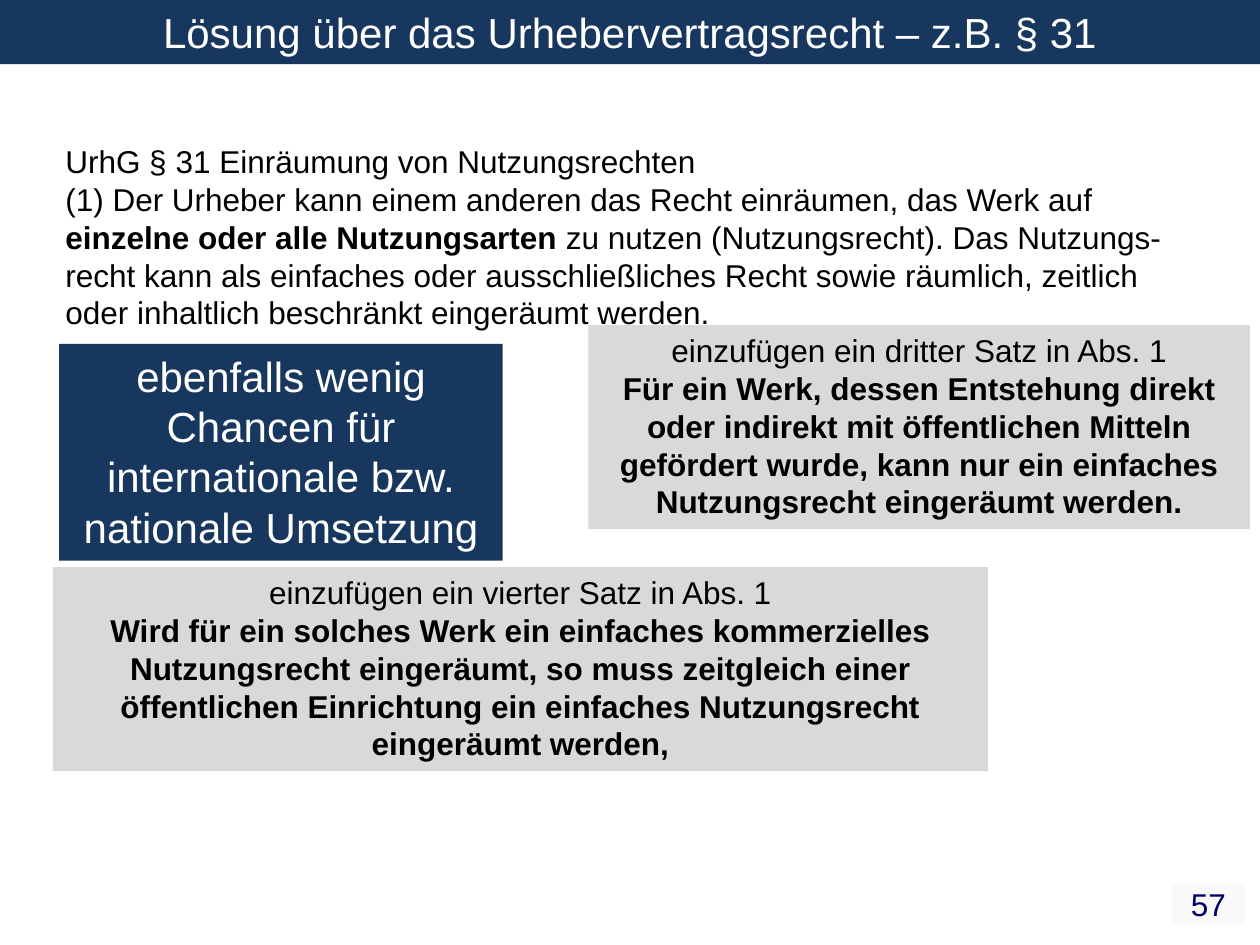
from pptx import Presentation
from pptx.dml.color import RGBColor
from pptx.enum.shapes import MSO_SHAPE
from pptx.enum.text import MSO_ANCHOR, MSO_AUTO_SIZE, PP_ALIGN
from pptx.util import Inches, Pt

COLORS = {
    "navy": "17375E",
    "grey": "D9D9D9",
    "pale": "F9F9F9",
    "white": "FFFFFF",
    "black": "000000",
    "number": "000066",
}


def color(name):
    """Return the named colour."""
    return RGBColor.from_string(COLORS[name])


def place(shape, box):
    """Move a shape to a box of left, top, width and height in inches."""
    shape.left, shape.top, shape.width, shape.height = map(Inches, box)


def write(shape, paragraphs, size=18, ink="black", align=PP_ALIGN.CENTER,
          anchor=MSO_ANCHOR.TOP, wrap=True):
    """Fill a shape with paragraphs, each a list of (text, bold) pairs."""
    frame = shape.text_frame
    frame.word_wrap = wrap
    frame.auto_size = MSO_AUTO_SIZE.NONE
    frame.vertical_anchor = anchor
    for index, spans in enumerate(paragraphs):
        para = frame.add_paragraph() if index else frame.paragraphs[0]
        para.alignment = align
        for text, bold in spans:
            span = para.add_run()
            span.text = text
            span.font.name = "Arial"
            span.font.size = Pt(size)
            span.font.bold = bold
            span.font.color.rgb = color(ink)


def add_title(page, box, text):
    """Format the title placeholder as a full-width band."""
    title = page.shapes.title
    place(title, box)
    title.fill.solid()
    title.fill.fore_color.rgb = color("navy")
    write(title, [[(text, False)]], size=24, ink="white")


def add_statute(page, box, paragraphs):
    """Add the quoted statute as left-aligned text."""
    statute = page.shapes.add_textbox(*map(Inches, box))
    write(statute, paragraphs, align=PP_ALIGN.LEFT)


def add_panel(page, box, paragraphs, fill="grey", **text_format):
    """Add a filled rectangle with centred text."""
    panel = page.shapes.add_shape(MSO_SHAPE.RECTANGLE, *map(Inches, box))
    panel.shadow.inherit = False
    panel.fill.solid()
    panel.fill.fore_color.rgb = color(fill)
    panel.line.fill.background()
    write(panel, paragraphs, **text_format)


def main():
    """Build and save the slide."""
    deck = Presentation()
    deck.slide_width, deck.slide_height = Inches(10), Inches(7.5)
    page = deck.slides.add_slide(deck.slide_layouts[5])

    add_panel(page, (9.3, 7.01, 0.58, 0.33), [[("57", False)]], fill="pale",
              ink="number", anchor=MSO_ANCHOR.MIDDLE, wrap=False)
    add_title(page, (0, 0, 10, 0.51),
              "Lösung über das Urhebervertragsrecht – z.B. § 31")
    add_statute(page, (0.42, 1.08, 9.25, 1.62), [
        [("UrhG § 31 Einräumung von Nutzungsrechten", False)],
        [("(1) Der Urheber kann einem anderen das Recht einräumen, "
          "das Werk auf ", False),
         ("einzelne oder alle Nutzungsarten ", True),
         ("zu nutzen (Nutzungsrecht). Das Nutzungs-recht kann als einfaches "
          "oder ausschließliches Recht sowie räumlich, zeitlich oder "
          "inhaltlich beschränkt eingeräumt werden.", False)],
    ])
    add_panel(page, (4.67, 2.58, 5.25, 1.62), [
        [("einzufügen ein dritter Satz in Abs. 1", False)],
        [("Für ein Werk, dessen Entstehung direkt oder indirekt mit "
          "öffentlichen Mitteln gefördert wurde, kann nur ein einfaches "
          "Nutzungsrecht eingeräumt werden.", True)],
    ])
    add_panel(page, (0.42, 4.5, 7.42, 1.62), [
        [("einzufügen ein vierter Satz in Abs. 1", False)],
        [("Wird für ein solches Werk ein einfaches kommerzielles "
          "Nutzungsrecht eingeräumt, so muss zeitgleich einer öffentlichen "
          "Einrichtung ein einfaches Nutzungsrecht eingeräumt werden,",
          True)],
    ])
    add_panel(page, (0.47, 2.73, 3.52, 1.72), [
        [("ebenfalls wenig Chancen für internationale bzw. nationale "
          "Umsetzung", False)],
    ], fill="navy", size=24, ink="white")

    deck.save("out.pptx")


if __name__ == "__main__":
    main()
